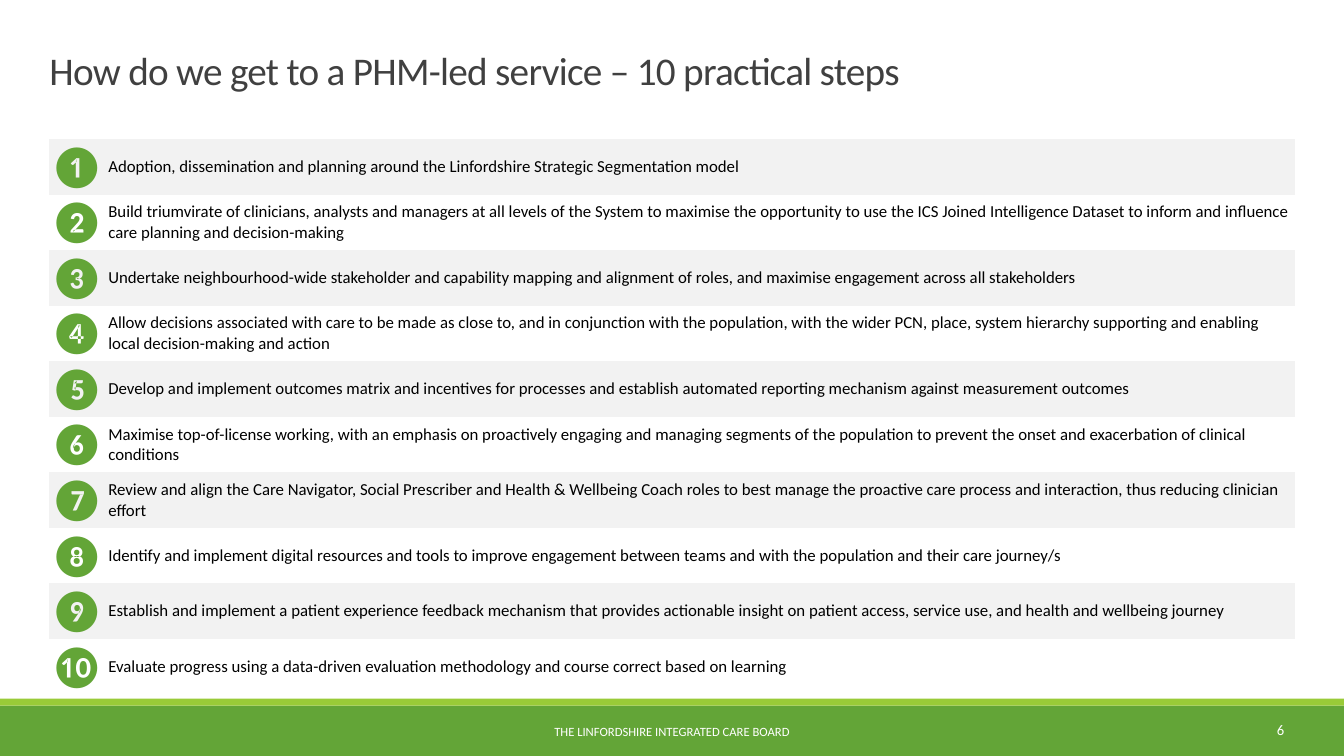
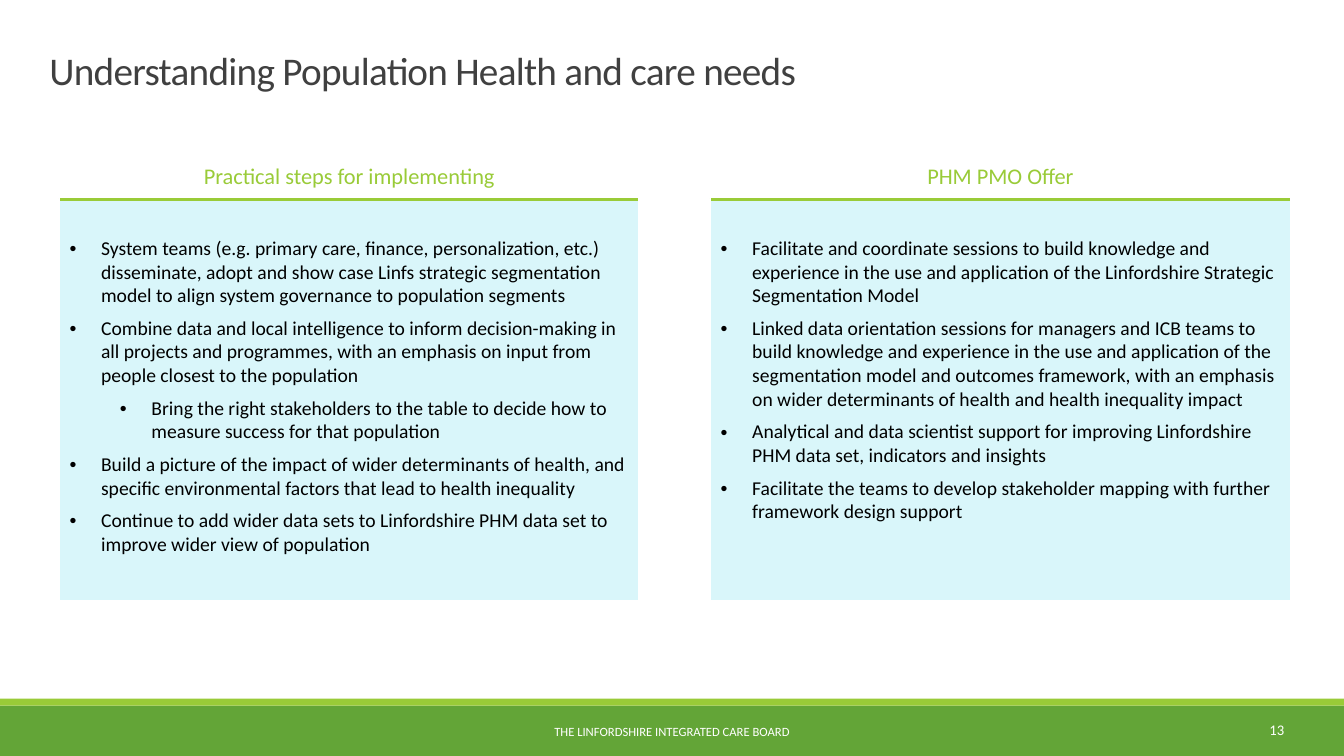
"""Build two slides on population health management: ten steps and a two-column offer."""
from pptx import Presentation
from pptx.dml.color import RGBColor
from pptx.enum.shapes import MSO_SHAPE as Shape
from pptx.enum.text import MSO_ANCHOR as Anchor, MSO_AUTO_SIZE as AutoSize, PP_ALIGN as Align
from pptx.oxml.ns import qn
from pptx.oxml.xmlchemy import OxmlElement
from pptx.util import Emu, Pt

COLOURS = {
    "green": "63A537", "lime": "99CB38", "pale_blue": "D9F6FA", "stripe": "F2F2F2",
    "white": "FFFFFF", "black": "000000", "heading": "404040",
}
FONT = "Calibri"
COLUMNS, ROWS = 96, 54
GRID_UNIT = Pt(10)
PLAIN_TABLE = "{2D5ABB26-0587-4C30-8999-92F81FD0307C}"
ORGANISATION = "THE LINFORDSHIRE INTEGRATED CARE BOARD"

STEPS = [
    "Adoption, dissemination and planning around the Linfordshire Strategic Segmentation model",
    "Build triumvirate of clinicians, analysts and managers at all levels of the System to maximise "
    "the opportunity to use the ICS Joined Intelligence Dataset to inform and influence care planning "
    "and decision-making",
    "Undertake neighbourhood-wide stakeholder and capability mapping and alignment of roles, and "
    "maximise engagement across all stakeholders",
    "Allow decisions associated with care to be made as close to, and in conjunction with the "
    "population, with the wider PCN, place, system hierarchy supporting and enabling local "
    "decision-making and action",
    "Develop and implement outcomes matrix and incentives for processes and establish automated "
    "reporting mechanism against measurement outcomes",
    "Maximise top-of-license working, with an emphasis on proactively engaging and managing segments "
    "of the population to prevent the onset and exacerbation of clinical conditions",
    "Review and align the Care Navigator, Social Prescriber and Health & Wellbeing Coach roles to best "
    "manage the proactive care process and interaction, thus reducing clinician effort",
    "Identify and implement digital resources and tools to improve engagement between teams and with "
    "the population and their care journey/s",
    "Establish and implement a patient experience feedback mechanism that provides actionable insight "
    "on patient access, service use, and health and wellbeing journey",
    "Evaluate progress using a data-driven evaluation methodology and course correct based on learning",
]

PRACTICAL_STEPS = [
    (0, "System teams (e.g. primary care, finance, personalization, etc.) disseminate, adopt and show "
        "case Linfs strategic segmentation model to align system governance to population segments"),
    (0, "Combine data and local intelligence to inform decision-making in all projects and programmes, "
        "with an emphasis on input from people closest to the population"),
    (1, "Bring the right stakeholders to the table to decide how to measure success for that population"),
    (0, "Build a picture of the impact of wider determinants of health, and specific environmental "
        "factors that lead to health inequality"),
    (0, "Continue to add wider data sets to Linfordshire PHM data set to improve wider view of population"),
]
PMO_OFFER = [
    (0, "Facilitate and coordinate sessions to build knowledge and experience in the use and "
        "application of the Linfordshire Strategic Segmentation Model"),
    (0, "Linked data orientation sessions for managers and ICB teams to build knowledge and experience "
        "in the use and application of the segmentation model and outcomes framework, with an emphasis "
        "on wider determinants of health and health inequality impact"),
    (0, "Analytical and data scientist support for improving Linfordshire PHM data set, indicators and "
        "insights"),
    (0, "Facilitate the teams to develop stakeholder mapping with further framework design support"),
]


def grid(units):
    return Emu(round(units * GRID_UNIT))


def colour(name):
    return RGBColor.from_string(COLOURS[name])


def style(paragraph, size, ink, align=Align.LEFT):
    paragraph.alignment = align
    for run in paragraph.runs:
        run.font.name, run.font.size, run.font.bold = FONT, Pt(size), False
        run.font.color.rgb = colour(ink)


def add_band(slide, top, height, fill):
    band = slide.shapes.add_shape(Shape.RECTANGLE, 0, grid(top), grid(COLUMNS), grid(height))
    band.shadow.inherit = False
    band.fill.solid()
    band.fill.fore_color.rgb = colour(fill)
    band.line.fill.background()


def add_footer_text(slide, text, box, size, align):
    frame = slide.shapes.add_textbox(*map(grid, box)).text_frame
    frame.word_wrap = True
    frame.vertical_anchor = Anchor.MIDDLE
    frame.text = text
    style(frame.paragraphs[0], size, "white", align)


def add_title(slide, text):
    title = slide.shapes.title
    title.left, title.top, title.width, title.height = map(grid, (3.53, 0, 88.92, 10.44))
    frame = title.text_frame
    frame.auto_size, frame.word_wrap = AutoSize.NONE, True
    frame.margin_left = frame.margin_right = frame.margin_top = frame.margin_bottom = 0
    frame.vertical_anchor = Anchor.MIDDLE
    frame.text = text
    heading = frame.paragraphs[0]
    heading.line_spacing = 0.85
    style(heading, 28, "heading")
    heading.runs[0].font._element.set("spc", "-50")


def add_page(deck, title, number):
    slide = deck.slides.add_slide(deck.slide_layouts[5])
    add_band(slide, 50.4, ROWS - 50.4, "green")
    add_band(slide, 49.9, 0.5, "lime")
    add_title(slide, title)
    add_footer_text(slide, str(number), (82.22, 50.69, 10.22, 2.88), 10.5, Align.RIGHT)
    add_footer_text(slide, ORGANISATION, (29.02, 50.83, 37.94, 2.88), 9, Align.CENTER)
    return slide


def add_plain_table(slide, left, top, widths, heights):
    table = slide.shapes.add_table(len(heights), len(widths), grid(left), grid(top),
                                   grid(sum(widths)), grid(sum(heights))).table
    table.first_row = table.horz_banding = False
    table._tbl.tblPr.find(qn("a:tableStyleId")).text = PLAIN_TABLE
    for column, width in zip(table.columns, widths):
        column.width = grid(width)
    for row, height in zip(table.rows, heights):
        row.height = grid(height)
    return table


def fill_cell(cell, fill):
    cell.fill.solid()
    cell.fill.fore_color.rgb = colour(fill)


def add_border(cell, side, ink, width):
    line = OxmlElement(f"a:ln{side}")
    line.set("w", str(Pt(width)))
    solid, value = OxmlElement("a:solidFill"), OxmlElement("a:srgbClr")
    value.set("val", COLOURS[ink])
    solid.append(value)
    line.append(solid)
    cell._tc.get_or_add_tcPr().append(line)


def set_step_cell(cell, text, size, ink, align, inset, fill):
    cell.margin_left = cell.margin_right = cell.margin_top = cell.margin_bottom = grid(inset)
    cell.vertical_anchor = Anchor.MIDDLE
    cell.text = text
    style(cell.text_frame.paragraphs[0], size, ink, align)
    fill_cell(cell, fill)


def set_bullets(cell, items):
    cell.margin_top = grid(2.65)
    frame = cell.text_frame
    frame.text = "\n".join(text for _, text in items)
    for paragraph, (level, _) in zip(frame.paragraphs, items):
        paragraph.level = level
        paragraph.space_before = paragraph.space_after = Pt(3)
        style(paragraph, 14, "black")
        properties = paragraph._p.get_or_add_pPr()
        properties.set("marL", str(grid(2.25 + 3.6 * level)))
        properties.set("indent", str(grid(-2.25)))
        typeface = OxmlElement("a:buFont")
        typeface.set("typeface", "Arial")
        bullet = OxmlElement("a:buChar")
        bullet.set("char", "•")
        properties.extend([typeface, bullet])


def add_steps(slide):
    table = add_plain_table(slide, 3.5, 9.93, (3.96, 85.04), [3.97] * len(STEPS))
    for row, (badge, step) in enumerate(zip("❶❷❸❹❺❻❼❽❾❿", STEPS)):
        fill = "white" if row % 2 else "stripe"
        set_step_cell(table.cell(row, 0), badge, 30, "green", Align.CENTER, 0, fill)
        set_step_cell(table.cell(row, 1), step, 12, "black", Align.LEFT, 0.28, fill)


def add_offer(slide):
    table = add_plain_table(slide, 4.25, 11.3, (41.4, 5.11, 41.4), (2.95, 28.62))
    topics = [(0, "Practical steps for implementing", PRACTICAL_STEPS), (2, "PHM PMO Offer", PMO_OFFER)]
    for column, heading, items in topics:
        header, body = table.cell(0, column), table.cell(1, column)
        header.text = heading
        style(header.text_frame.paragraphs[0], 16, "lime", Align.CENTER)
        add_border(header, "B", "lime", 3)
        set_bullets(body, items)
        for side, ink, width in (("L", "white", 1), ("R", "white", 1), ("T", "lime", 3), ("B", "white", 1)):
            add_border(body, side, ink, width)
        fill_cell(body, "pale_blue")


def main():
    deck = Presentation()
    deck.slide_width, deck.slide_height = grid(COLUMNS), grid(ROWS)
    add_steps(add_page(deck, "How do we get to a PHM-led service – 10 practical steps", 6))
    add_offer(add_page(deck, "Understanding Population Health and care needs", 13))
    deck.save("out.pptx")


if __name__ == "__main__":
    main()
